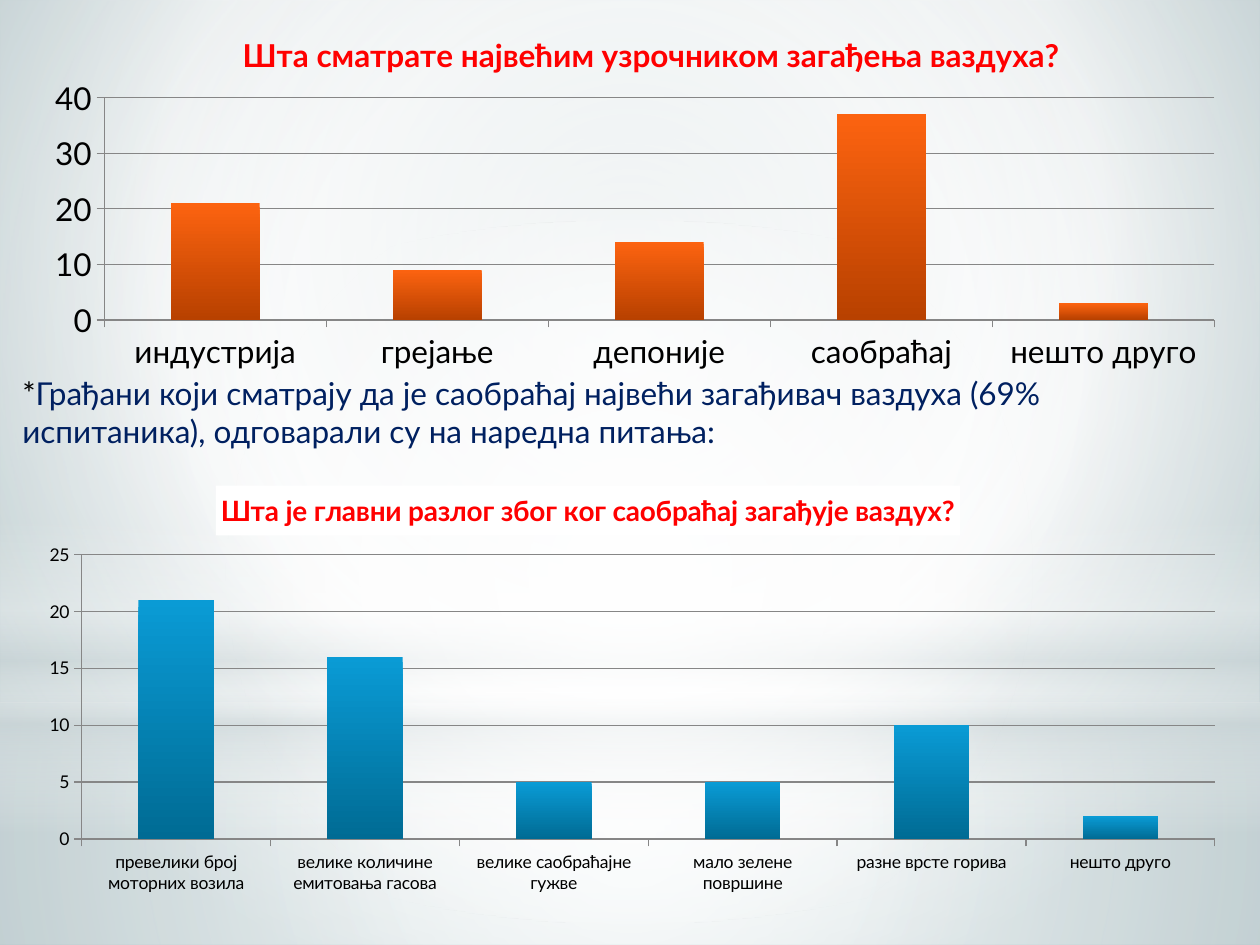
from lxml.etree import SubElement
from pptx import Presentation
from pptx.chart.data import CategoryChartData
from pptx.dml.color import RGBColor
from pptx.enum.chart import XL_CHART_TYPE as ChartType, XL_TICK_MARK as Tick
from pptx.enum.shapes import MSO_SHAPE as Shape
from pptx.oxml import parse_xml
from pptx.oxml.ns import nsdecls, qn
from pptx.util import Cm, Pt

FONT = "Lato"
BLACK = RGBColor(0x00, 0x00, 0x00)
WHITE = RGBColor(0xFF, 0xFF, 0xFF)
RED = RGBColor(0xFF, 0x00, 0x00)
NAVY = RGBColor(0x00, 0x20, 0x60)
GREY = RGBColor(0x86, 0x86, 0x86)
MIST = RGBColor(0xCD, 0xD7, 0xD9)
PALE_TEAL = RGBColor(0xC2, 0xD0, 0xD3)
TEAL = RGBColor(0x9A, 0xB5, 0xBA)
ORANGES = RGBColor(0xFC, 0x63, 0x10), RGBColor(0xB8, 0x41, 0x00)
BLUES = RGBColor(0x0A, 0x9B, 0xD5), RGBColor(0x00, 0x6B, 0x94)

WIDTH, HEIGHT = Cm(25.4), Cm(19.05)
CENTRE = (50, 50, 50, 50)


def apply_gradient(holder, stops, focus=None):
    """Swap the solid fill for (position, colour, opacity) stops.

    They spread from the focus rectangle, or run downwards without one.
    """
    marks = "".join(
        f'<a:gs pos="{pos * 1000}"><a:srgbClr val="{colour}">'
        f'<a:alpha val="{opacity * 1000}"/></a:srgbClr></a:gs>'
        for pos, colour, opacity in stops)
    if focus:
        sides = " ".join(f'{side}="{value * 1000}"' for side, value in zip("ltrb", focus))
        direction = f'<a:path path="circle"><a:fillToRect {sides}/></a:path>'
    else:
        direction = '<a:lin ang="5400000" scaled="0"/>'
    gradient = parse_xml(f'<a:gradFill {nsdecls("a")} rotWithShape="1">'
                         f'<a:gsLst>{marks}</a:gsLst>{direction}</a:gradFill>')
    solid = holder.find(qn("a:solidFill"))
    holder.replace(solid, gradient)


def add_glow(slide, outline, box, stops, focus=None):
    glow = slide.shapes.add_shape(outline, *box)
    glow.shadow.inherit = False
    glow.line.fill.background()
    glow.fill.solid()
    apply_gradient(glow.element.spPr, stops, focus)


def add_backdrop(slide, width, height):
    slide.background.fill.solid()
    apply_gradient(slide.element.find(".//" + qn("p:bgPr")),
                   [(0, PALE_TEAL, 100), (60, WHITE, 100), (100, TEAL, 100)],
                   (20, 10, 20, 60))
    horizon = Cm(14.17)
    add_glow(slide, Shape.RECTANGLE, (0, horizon, width, height - horizon),
             [(0, WHITE, 91), (37, WHITE, 76), (100, MIST, 79)], CENTRE)
    add_glow(slide, Shape.RECTANGLE, (0, 0, width, horizon),
             [(0, WHITE, 89), (48, WHITE, 62), (100, MIST, 79)], CENTRE)
    add_glow(slide, Shape.RECTANGLE, (0, Cm(10.46), width, Cm(6.35)),
             [(0, WHITE, 0), (29, WHITE, 30), (45, MIST, 40),
              (55, WHITE, 26), (65, MIST, 60), (100, WHITE, 0)])
    add_glow(slide, Shape.OVAL, (0, Cm(4.45), width, horizon),
             [(0, WHITE, 100), (56, WHITE, 0)], CENTRE)


def set_layout(part, **fractions):
    """Place a chart part by fractions of the chart's size."""
    layout = part.find(qn("c:layout"))
    if layout is None:
        layout = parse_xml(f'<c:layout {nsdecls("c")}/>')
        tx = part.find(qn("c:tx"))
        part.insert(0 if tx is None else part.index(tx) + 1, layout)
    for child in list(layout):
        layout.remove(child)
    manual = SubElement(layout, qn("c:manualLayout"))
    if "w" in fractions:
        SubElement(manual, qn("c:layoutTarget"), val="inner")
    for side in "xy":
        SubElement(manual, qn(f"c:{side}Mode"), val="edge")
    for name, value in fractions.items():
        SubElement(manual, qn(f"c:{name}"), val=str(value))


def style_axis(axis):
    axis.major_tick_mark = Tick.OUTSIDE
    axis.minor_tick_mark = Tick.NONE
    axis.format.line.color.rgb = GREY
    axis.format.line.width = Pt(0.75)


def add_survey_chart(slide, box, question, answers, bar_colours, label_size,
                     question_size, question_at, plot_at, top, step):
    data = CategoryChartData()
    data.categories = list(answers)
    data.add_series("Series 1", list(answers.values()))
    chart = slide.shapes.add_chart(ChartType.COLUMN_CLUSTERED, *box, data).chart
    chart.has_legend = False
    chart.font.name, chart.font.size = FONT, label_size
    chart.font.color.rgb = BLACK

    title = chart.chart_title
    title.text_frame.text = question
    font = title.text_frame.paragraphs[0].font
    font.name, font.size, font.bold = FONT, question_size, True
    font.color.rgb = RED
    set_layout(chart.element.find(".//" + qn("c:title")), **question_at)
    set_layout(chart.element.find(".//" + qn("c:plotArea")), **plot_at)

    plot = chart.plots[0]
    plot.gap_width = 150
    plot.vary_by_categories = False
    bars = plot.series[0]
    bars.invert_if_negative = False
    fill = bars.format.fill
    fill.gradient()
    fill.gradient_angle = 270
    for stop, colour in zip(fill.gradient_stops, bar_colours):
        stop.color.rgb = colour

    style_axis(chart.category_axis)
    values = chart.value_axis
    style_axis(values)
    values.minimum_scale, values.maximum_scale, values.major_unit = 0, top, step
    values.has_major_gridlines = True
    values.major_gridlines.format.line.color.rgb = GREY
    values.major_gridlines.format.line.width = Pt(0.75)
    return chart


def add_remark(slide, box, marker, remark):
    frame = slide.shapes.add_textbox(*box).text_frame
    frame.word_wrap = True
    paragraph = frame.paragraphs[0]
    paragraph.font.name, paragraph.font.size = FONT, Pt(18)
    for text, colour in ((marker, BLACK), (remark, NAVY)):
        run = paragraph.add_run()
        run.text = text
        run.font.color.rgb = colour


def main():
    deck = Presentation()
    deck.slide_width, deck.slide_height = WIDTH, HEIGHT
    slide = deck.slides.add_slide(deck.slide_layouts[6])
    add_backdrop(slide, WIDTH, HEIGHT)

    add_survey_chart(
        slide, (Cm(0.64), 0, Cm(24.33), Cm(7.59)),
        "Шта сматрате највећим узрочником загађења ваздуха?",
        {"индустрија": 21, "грејање": 9, "депоније": 14, "саобраћај": 37,
         "нешто друго": 3},
        ORANGES, label_size=Pt(18), question_size=Pt(18),
        question_at=dict(x=0.17, y=0.07),
        plot_at=dict(x=0.06, y=0.26, w=0.92, h=0.59), top=40, step=10)

    add_remark(
        slide, (Cm(0.2), Cm(7.42), Cm(24.77), Cm(1.8)), "*",
        "Грађани који сматрају да је саобраћај највећи загађивач ваздуха "
        "(69% испитаника), одговарали су на наредна питања:")

    reasons = add_survey_chart(
        slide, (Cm(0.42), Cm(9.53), Cm(24.56), Cm(8.69)),
        "Шта је главни разлог због ког саобраћај загађује ваздух?",
        {"превелики број моторних возила": 21,
         "велике количине емитовања гасова": 16,
         "велике саобраћајне гужве": 5, "мало зелене површине": 5,
         "разне врсте горива": 10, "нешто друго": 2},
        BLUES, label_size=Pt(10), question_size=Pt(16),
        question_at=dict(x=0.16, y=0.03),
        plot_at=dict(x=0.05, y=0.19, w=0.93, h=0.66), top=25, step=5)
    title_fill = reasons.chart_title.format.fill
    title_fill.solid()
    title_fill.fore_color.rgb = WHITE

    deck.save("out.pptx")


if __name__ == "__main__":
    main()
